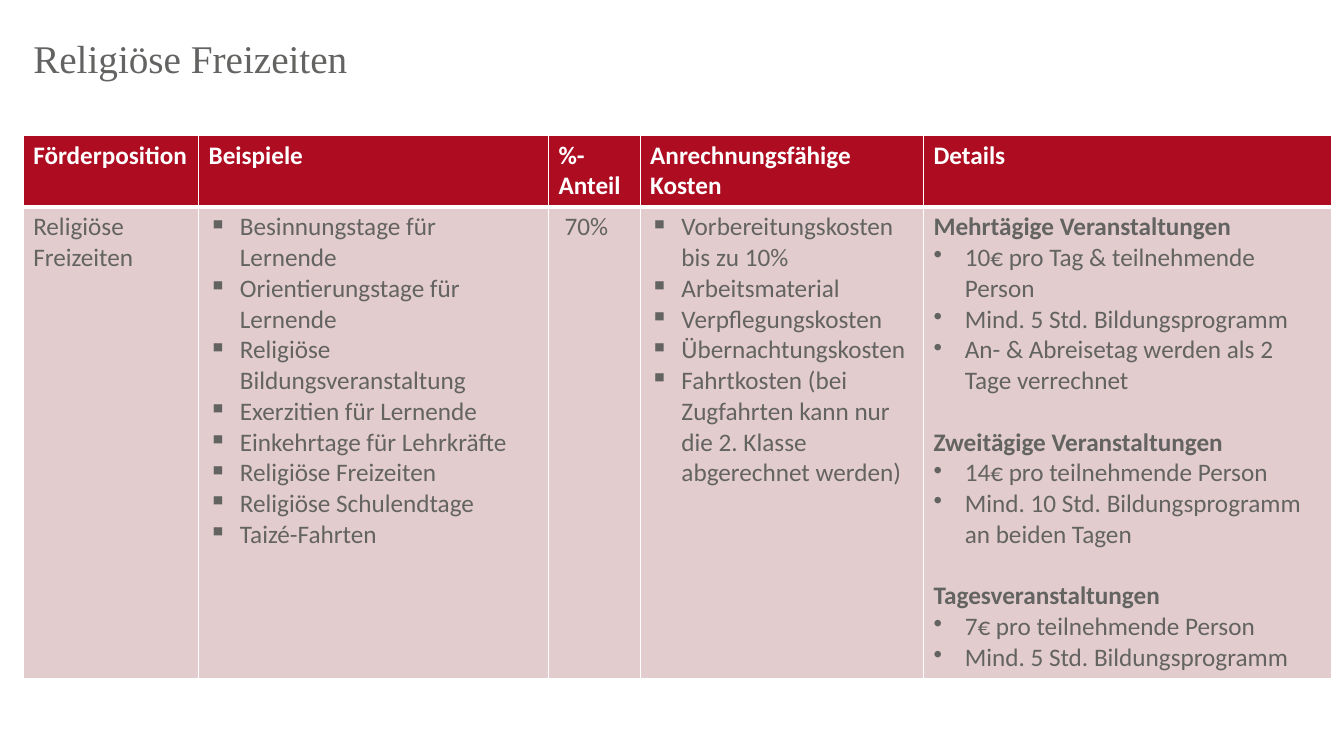
from lxml.etree import SubElement
from pptx import Presentation
from pptx.dml.color import RGBColor
from pptx.enum.text import MSO_ANCHOR, PP_ALIGN
from pptx.oxml.ns import qn
from pptx.util import Inches, Pt

COLORS = {"header": "AE0C21", "body": "E3CCCD", "text": "636362", "white": "FFFFFF"}
INDENT = Inches(0.31)
LINE_GAP = Pt(22)

COLUMN_WIDTHS = [1.74, 3.47, 0.91, 2.81, 4.05]
ROW_HEIGHTS = [0.7, 4.67]
HEADERS = ["Förderposition", "Beispiele", "%-Anteil", "Anrechnungsfähige Kosten", "Details"]
EXAMPLES = [
    "Besinnungstage für Lernende",
    "Orientierungstage für Lernende",
    "Religiöse Bildungsveranstaltung",
    "Exerzitien für Lernende",
    "Einkehrtage für Lehrkräfte",
    "Religiöse Freizeiten",
    "Religiöse Schulendtage",
    "Taizé-Fahrten",
]
COSTS = [
    "Vorbereitungskosten bis zu 10%",
    "Arbeitsmaterial",
    "Verpflegungskosten",
    "Übernachtungskosten",
    "Fahrtkosten (bei Zugfahrten kann nur die 2. Klasse abgerechnet werden)",
]
DETAILS = {
    "Mehrtägige Veranstaltungen": [
        "10€ pro Tag & teilnehmende Person",
        "Mind. 5 Std. Bildungsprogramm",
        "An- & Abreisetag werden als 2 Tage verrechnet",
    ],
    "Zweitägige Veranstaltungen": [
        "14€ pro teilnehmende Person",
        "Mind. 10 Std. Bildungsprogramm an beiden Tagen",
    ],
    "Tagesveranstaltungen": [
        "7€ pro teilnehmende Person",
        "Mind. 5 Std. Bildungsprogramm",
    ],
}


def rgb(name):
    return RGBColor.from_string(COLORS[name])


def style_cell(cell, fill, bottom_width=1):
    """Draw white borders, then fill the cell."""
    properties = cell._tc.get_or_add_tcPr()
    for side, width in (("L", 1), ("R", 1), ("T", 1), ("B", bottom_width)):
        border = SubElement(properties, qn(f"a:ln{side}"), w=str(Pt(width)))
        solid = SubElement(border, qn("a:solidFill"))
        SubElement(solid, qn("a:srgbClr"), val=COLORS["white"])
    cell.fill.solid()
    cell.fill.fore_color.rgb = rgb(fill)


def add_line(cell, text, color="text", bold=False, bullet=None):
    """Write text into the cell's first free paragraph."""
    frame = cell.text_frame
    line = frame.add_paragraph() if frame.text else frame.paragraphs[0]
    line.text = text
    if bullet:
        properties = line._p.get_or_add_pPr()
        properties.set("marL", str(INDENT))
        properties.set("indent", str(-INDENT))
        SubElement(properties, qn("a:buChar"), char=bullet)
    line.font.name = "Calibri"
    line.font.size = Pt(18)
    line.font.bold = bold
    line.font.color.rgb = rgb(color)
    return line


def add_title(slide, left, top, width, height):
    title = slide.shapes.title
    title.left, title.top = Inches(left), Inches(top)
    title.width, title.height = Inches(width), Inches(height)
    title.text_frame.text = "Religiöse Freizeiten"
    title.text_frame.vertical_anchor = MSO_ANCHOR.MIDDLE
    heading = title.text_frame.paragraphs[0]
    heading.alignment = PP_ALIGN.LEFT
    heading.line_spacing = 0.9
    heading.font.name = "Times New Roman"
    heading.font.size = Pt(28)
    heading.font.color.rgb = rgb("text")


def add_funding_table(slide, left, top):
    funding = slide.shapes.add_table(
        len(ROW_HEIGHTS), len(COLUMN_WIDTHS), Inches(left), Inches(top),
        Inches(sum(COLUMN_WIDTHS)), Inches(sum(ROW_HEIGHTS))).table
    for column, width in zip(funding.columns, COLUMN_WIDTHS):
        column.width = Inches(width)
    for row, height in zip(funding.rows, ROW_HEIGHTS):
        row.height = Inches(height)

    # Header row
    for cell, label in zip(funding.rows[0].cells, HEADERS):
        style_cell(cell, "header", bottom_width=3)
        add_line(cell, label, "white", bold=True)

    # Body row
    position, examples, share, costs, details = funding.rows[1].cells
    for cell in (position, examples, share, costs, details):
        style_cell(cell, "body")
    add_line(position, "Religiöse Freizeiten")
    share_line = add_line(share, "70%")
    share_line._p.get_or_add_pPr().set("marL", str(Inches(0.06)))
    for cell, items in ((examples, EXAMPLES), (costs, COSTS)):
        for item in items:
            add_line(cell, item, bullet="▪")

    # Details grouped by event length
    for number, (event, rules) in enumerate(DETAILS.items()):
        event_line = add_line(details, event, bold=True)
        if number:
            event_line.space_before = LINE_GAP
        for rule in rules:
            add_line(details, rule, bullet="•")


def main():
    deck = Presentation()
    deck.slide_width, deck.slide_height = Inches(13.33), Inches(7.5)
    slide = deck.slides.add_slide(deck.slide_layouts[5])
    add_title(slide, 0.23, 0.23, 11.13, 0.75)
    add_funding_table(slide, 0.23, 1.34)
    deck.save("out.pptx")


if __name__ == "__main__":
    main()
